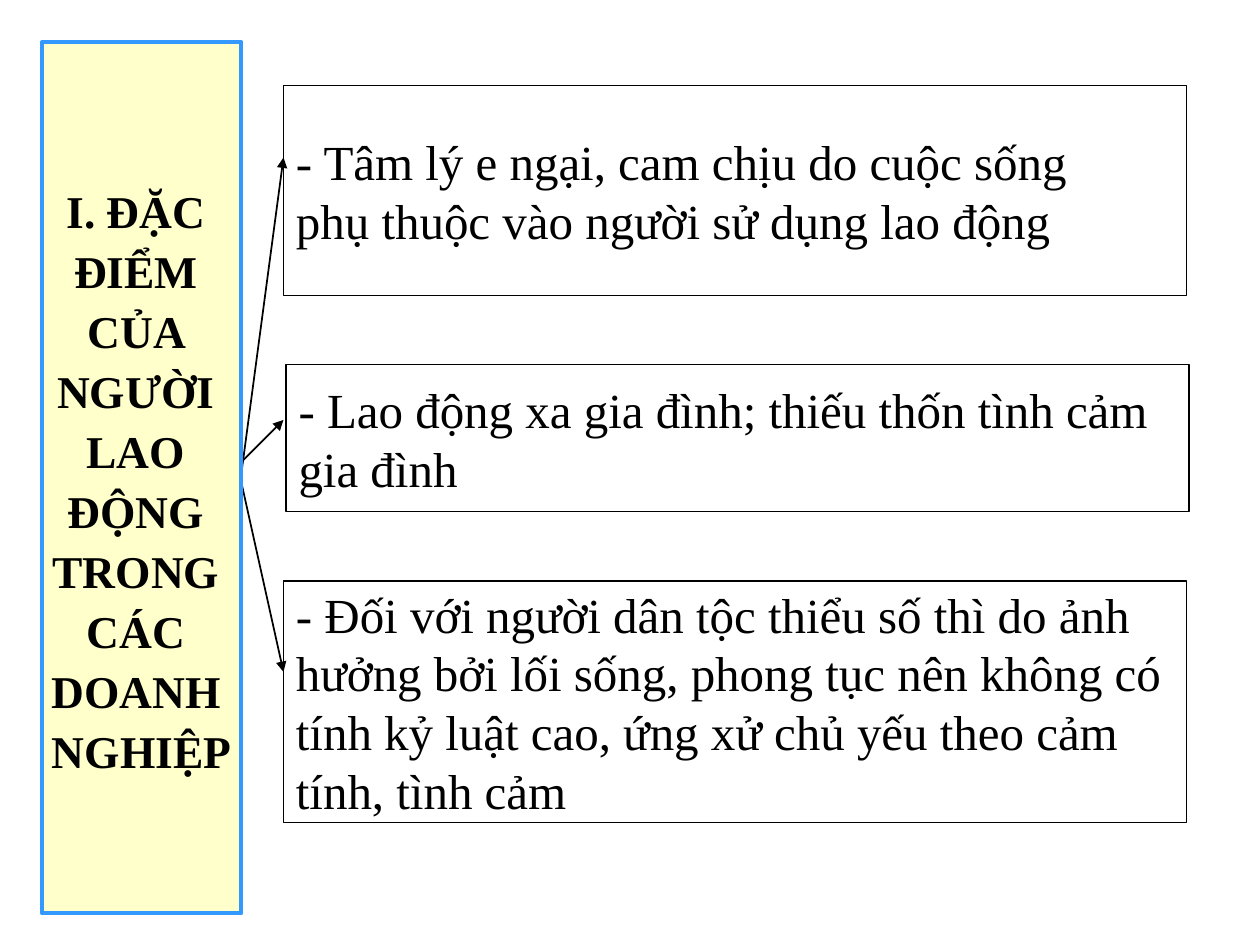
"""Build a slide linking a vertical heading to three boxed statements."""
import pptx
import pptx.util
import pptx.dml.color
import pptx.enum.shapes
import pptx.enum.text
import pptx.oxml.ns
import lxml.etree

Pt = pptx.util.Pt
RGBColor = pptx.dml.color.RGBColor
ALIGN = pptx.enum.text.PP_ALIGN
BLACK = RGBColor(0x00, 0x00, 0x00)
WHITE = RGBColor(0xFF, 0xFF, 0xFF)
CREAM = RGBColor(0xFF, 0xFF, 0xCC)
BLUE = RGBColor(0x33, 0x99, 0xFF)


def add_box(s, bounds, fill, line, width, lines, size, align, bold=False, spacing=None):
    sp = s.shapes.add_shape(
        pptx.enum.shapes.MSO_SHAPE.RECTANGLE, *[Pt(v) for v in bounds])
    sp.shadow.inherit = False
    sp.fill.solid()
    sp.fill.fore_color.rgb = fill
    sp.line.color.rgb = line
    sp.line.width = Pt(width)
    tf = sp.text_frame
    tf.text = "\n".join(lines)
    tf.word_wrap = False
    tf.vertical_anchor = pptx.enum.text.MSO_ANCHOR.MIDDLE
    for p in tf.paragraphs:
        p.alignment = align
        p.line_spacing = spacing
        for r in p.runs:
            r.font.name = "Times New Roman"
            r.font.size = Pt(size)
            r.font.bold = bold
            r.font.color.rgb = BLACK


def add_arrow(s, x1, y1, x2, y2):
    sp = s.shapes.add_connector(
        pptx.enum.shapes.MSO_CONNECTOR.STRAIGHT, Pt(x1), Pt(y1), Pt(x2), Pt(y2))
    sp.line.color.rgb = BLACK
    sp.line.width = Pt(1)
    qn = pptx.oxml.ns.qn
    lxml.etree.SubElement(sp.line._get_or_add_ln(), qn("a:tailEnd"), type="triangle")
    lxml.etree.SubElement(sp._element.spPr, qn("a:effectLst"))


prs = pptx.Presentation()
prs.slide_width, prs.slide_height = Pt(720), Pt(540)
s = prs.slides.add_slide(prs.slide_layouts[6])

statements = [
    (162, 49, 120, 0.75, ALIGN.JUSTIFY,
     ["- Tâm lý e ngại, cam chịu do cuộc sống ",
      "phụ thuộc vào người sử dụng lao động"]),
    (163.5, 208.5, 84, 0.75, ALIGN.JUSTIFY,
     ["- Lao động xa gia đình; thiếu thốn tình cảm ",
      "gia đình"]),
    (162, 332, 138, 1, ALIGN.LEFT,
     ["- Đối với người dân tộc thiểu số thì do ảnh",
      "hưởng bởi lối sống, phong tục nên không có",
      "tính kỷ luật cao, ứng xử chủ yếu theo cảm",
      "tính, tình cảm"]),
]
for left, top, height, width, align, lines in statements:
    add_box(s, (left, top, 516, height), WHITE, BLACK, width, lines, 28, align)

for start, end in [(270, 90), (264, 240), (276, 384)]:
    add_arrow(s, 138, start, 162, end)

heading = ["I. ĐẶC ", "ĐIỂM ", "CỦA ", "NGƯỜI ", "LAO ",
           "ĐỘNG ", "TRONG ", "CÁC ", "DOANH ", "NGHIỆP"]
add_box(s, (24, 24, 114, 498), CREAM, BLUE, 2.25, heading, 26, ALIGN.CENTER,
        bold=True, spacing=1.1)

prs.save("out.pptx")
